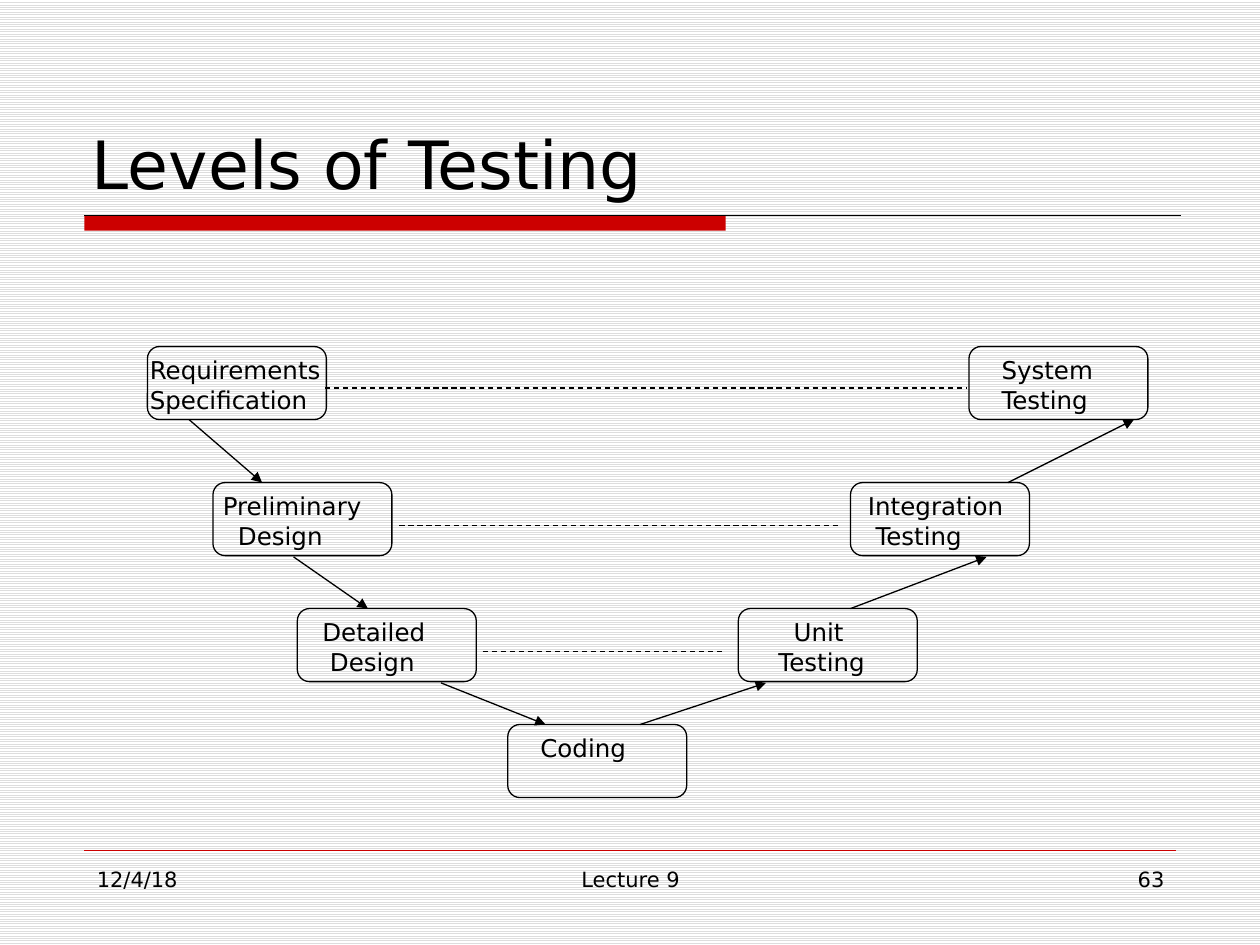
from lxml.etree import SubElement
from pptx import Presentation
from pptx.dml.color import RGBColor
from pptx.enum.dml import MSO_LINE as Dash, MSO_PATTERN as Pat
from pptx.enum.shapes import MSO_CONNECTOR as Conn, MSO_SHAPE as Kind
from pptx.enum.text import MSO_ANCHOR as Anchor, MSO_AUTO_SIZE as Fit, PP_ALIGN as Align
from pptx.oxml.ns import qn
from pptx.util import Inches, Pt

FONT, INK, RED = "DejaVu Sans", "000000", "CC0000"
WIDE, HIGH, STEP = 1.42, 0.58, 0.06

STAGES = [
    (1.17, 2.75, [("Requirements", 0), ("Specification", 0)]),
    (1.69, 3.83, [("Preliminary", 1), ("Design", 3)]),
    (2.36, 4.83, [("Detailed", 3), ("Design", 4)]),
    (4.03, 5.75, [("Coding", 4)]),
    (5.86, 4.83, [("Unit", 7), ("Testing", 5)]),
    (6.75, 3.83, [("Integration", 2), ("Testing", 3)]),
    (7.69, 2.75, [("System", 4), ("Testing", 4)]),
]
ARROWS = [
    (1.5, 3.33, 2.08, 3.83),
    (2.33, 4.42, 2.92, 4.83),
    (3.5, 5.42, 4.33, 5.75),
    (5.08, 5.75, 6.08, 5.42),
    (6.75, 4.83, 7.83, 4.42),
    (8, 3.83, 9, 3.33),
]
LINKS = [(2.58, 7.67, 3.08), (3.17, 6.67, 4.17), (3.83, 5.75, 5.17)]
FOOTER = [
    (0.67, 2.17, "12/4/18", Align.LEFT),
    (3.42, 3.17, "Lecture 9", Align.CENTER),
    (7.17, 2.17, "63", Align.RIGHT),
]


def color(text):
    return RGBColor.from_string(text)


class Sketch:
    """Draws styled elements on the current slide."""

    def __init__(self, deck):
        self.slide = deck.slides.add_slide(deck.slide_layouts[5])
        self.shapes = self.slide.shapes

    def paper(self, fore, back):
        fill = self.slide.background.fill
        fill.patterned()
        fill.pattern = Pat.LIGHT_HORIZONTAL
        fill.fore_color.rgb = color(fore)
        fill.back_color.rgb = color(back)

    def style(self, para, size, align=Align.LEFT):
        para.alignment = align
        para.font.name = FONT
        para.font.size = Pt(size)
        para.font.color.rgb = color(INK)

    def title(self, text, *area):
        head = self.shapes.title
        head.left, head.top, head.width, head.height = map(Inches, area)
        frame = head.text_frame
        frame.text = text
        frame.auto_size = Fit.NONE
        frame.vertical_anchor = Anchor.BOTTOM
        self.style(frame.paragraphs[0], 38)

    def text(self, area, rows, size, align=Align.LEFT):
        frame = self.shapes.add_textbox(*map(Inches, area)).text_frame
        frame.word_wrap = True
        frame.text = "\n".join(word for word, _ in rows)
        for para, (_, depth) in zip(frame.paragraphs, rows):
            self.style(para, size, align)
            if depth:
                para._p.get_or_add_pPr().set("marL", str(Inches(depth * STEP)))

    def bar(self, *area):
        bar = self.shapes.add_shape(Kind.RECTANGLE, *map(Inches, area))
        bar.shadow.inherit = False
        bar.fill.solid()
        bar.fill.fore_color.rgb = color(RED)
        bar.line.fill.background()

    def stage(self, left, top, rows):
        box = self.shapes.add_shape(
            Kind.ROUNDED_RECTANGLE, *map(Inches, (left, top, WIDE, HIGH)))
        box.shadow.inherit = False
        box.fill.background()
        box.line.color.rgb = color(INK)
        box.line.width = Pt(0.75)
        self.text((left - 0.08, top + 0.02, WIDE + 0.16, HIGH), rows, 14)

    def line(self, *ends, tint=INK, width=0.75, dash=False, arrow=False):
        link = self.shapes.add_connector(Conn.STRAIGHT, *map(Inches, ends))
        link.line.color.rgb = color(tint)
        link.line.width = Pt(width)
        if dash:
            link.line.dash_style = Dash.DASH
        if arrow:
            SubElement(link.line._get_or_add_ln(), qn("a:tailEnd"), type="triangle")
        SubElement(link._element.spPr, qn("a:effectLst"))


def main():
    deck = Presentation()
    deck.slide_width, deck.slide_height = Inches(10), Inches(7.5)
    page = Sketch(deck)
    page.paper("DDDDDD", "FFFFFF")
    page.bar(0.67, 1.71, 5.09, 0.12)
    page.line(0.67, 1.71, 9.37, 1.71)
    page.line(0.67, 6.75, 9.33, 6.75, tint=RED, width=0.25)
    for left, width, word, align in FOOTER:
        page.text((left, 6.83, width, 0.52), [(word, 0)], 12, align)
    page.title("Levels of Testing", 0.63, 0.33, 8.75, 1.33)
    for stage in STAGES:
        page.stage(*stage)
    for ends in ARROWS:
        page.line(*ends, arrow=True)
    for left, right, top in LINKS:
        page.line(left, top, right, top, dash=True)
    deck.save("out.pptx")


if __name__ == "__main__":
    main()
